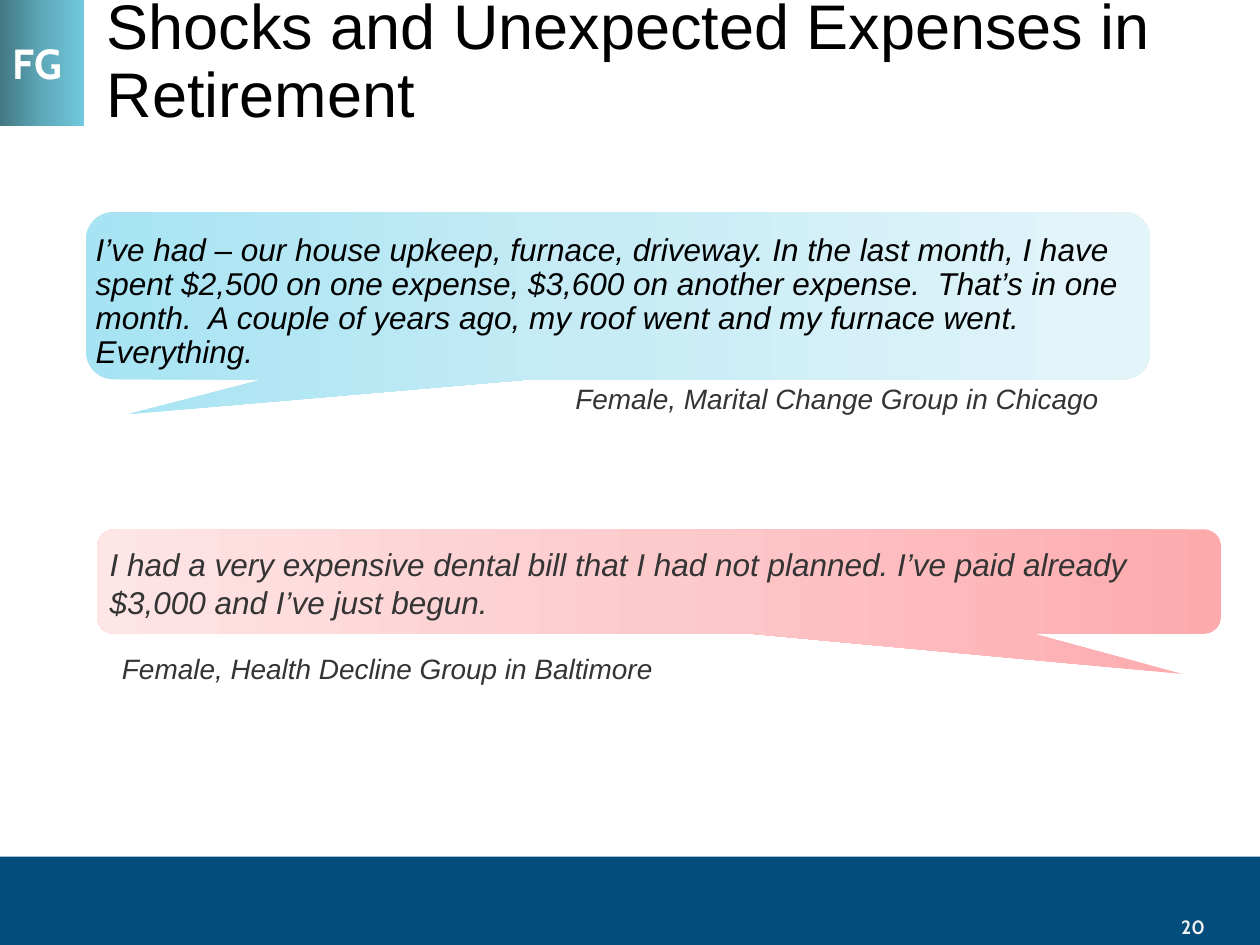
from copy import deepcopy
from dataclasses import dataclass

from pptx import Presentation
from pptx.dml.color import RGBColor
from pptx.enum.shapes import MSO_SHAPE
from pptx.enum.text import MSO_ANCHOR, PP_ALIGN
from pptx.oxml.ns import qn
from pptx.shapes.autoshape import Shape
from pptx.slide import Slide
from pptx.util import Cm, Pt

BLACK = RGBColor(0x00, 0x00, 0x00)
CHARCOAL = RGBColor(0x34, 0x34, 0x34)
WHITE = RGBColor(0xFF, 0xFF, 0xFF)
PALE_GREY = RGBColor(0xF2, 0xF2, 0xF2)
NAVY = RGBColor(0x02, 0x4D, 0x7C)
TEALS = (RGBColor(0x42, 0x77, 0x82), RGBColor(0x5E, 0xA9, 0xB9), RGBColor(0x70, 0xC8, 0xDC))
BLUES = (RGBColor(0xA7, 0xE3, 0xF3), RGBColor(0xC8, 0xEC, 0xF6), RGBColor(0xE4, 0xF5, 0xFA))
PINKS = (RGBColor(0xFD, 0xAA, 0xAD), RGBColor(0xFD, 0xCA, 0xCC), RGBColor(0xFE, 0xE5, 0xE6))


@dataclass(frozen=True)
class Box:
    """Left, top, width and height in centimetres."""
    left: float
    top: float
    width: float
    height: float

    def lengths(self) -> tuple[Cm, Cm, Cm, Cm]:
        return Cm(self.left), Cm(self.top), Cm(self.width), Cm(self.height)


@dataclass(frozen=True)
class TextStyle:
    size: int
    color: RGBColor
    font: str = "Arial"
    bold: bool = False
    italic: bool = False
    line_spacing: float = 1.0
    anchor: MSO_ANCHOR = MSO_ANCHOR.TOP
    align: PP_ALIGN = PP_ALIGN.LEFT
    wrap: bool = True


@dataclass(frozen=True)
class Bubble:
    box: Box
    tail: tuple[float, float]
    colors: tuple[RGBColor, ...]
    angle: int


@dataclass(frozen=True)
class Label:
    box: Box
    text: str
    style: TextStyle


BUBBLES = (
    Bubble(Box(1.96, 10.67, 22.66, 2.11), (0.464, 0.88), PINKS, 180),
    Bubble(Box(1.73, 4.27, 21.46, 3.38), (-0.46, 0.707), BLUES, 0),
)

LABELS = (
    Label(Box(1.9, 0, 22.23, 2.54), "Shocks and Unexpected Expenses in Retirement",
          TextStyle(36, BLACK, line_spacing=0.9, anchor=MSO_ANCHOR.MIDDLE)),
    Label(Box(1.68, 4.6, 21.51, 2.77),
          "I’ve had – our house upkeep, furnace, driveway. In the last month, I have "
          "spent $2,500 on one expense, $3,600 on another expense.  That’s in one month.  "
          "A couple of years ago, my roof went and my furnace went. Everything.",
          TextStyle(18, BLACK, italic=True, line_spacing=0.9)),
    Label(Box(11.35, 7.65, 11.23, 1.04), "Female, Marital Change Group in Chicago",
          TextStyle(16, CHARCOAL, italic=True, line_spacing=0.9)),
    Label(Box(1.96, 10.74, 22.23, 2.03),
          "I had a very expensive dental bill that I had not planned. "
          "I’ve paid already $3,000 and I’ve just begun.",
          TextStyle(18, CHARCOAL, italic=True, anchor=MSO_ANCHOR.MIDDLE)),
    Label(Box(2.21, 13, 11.66, 1.02), "Female, Health Decline Group in Baltimore",
          TextStyle(16, CHARCOAL, italic=True)),
    Label(Box(18.62, 18.21, 5.92, 0.84), "20",
          TextStyle(11, PALE_GREY, "Cabin", bold=True, anchor=MSO_ANCHOR.BOTTOM,
                    align=PP_ALIGN.RIGHT)),
)


def write_text(shape: Shape, text: str, style: TextStyle) -> None:
    frame = shape.text_frame
    frame.text = text
    frame.word_wrap = style.wrap
    frame.vertical_anchor = style.anchor
    paragraph = frame.paragraphs[0]
    paragraph.alignment = style.align
    paragraph.line_spacing = style.line_spacing
    font = paragraph.runs[0].font
    font.name = style.font
    font.size = Pt(style.size)
    font.bold = style.bold
    font.italic = style.italic
    font.color.rgb = style.color


def add_plain_shape(slide: Slide, kind: MSO_SHAPE, box: Box) -> Shape:
    """Add a preset shape with neither outline nor shadow."""
    shape = slide.shapes.add_shape(kind, *box.lengths())
    shape.shadow.inherit = False
    shape.line.fill.background()
    return shape


def fill_gradient(shape: Shape, colors: tuple[RGBColor, ...], angle: int) -> None:
    """Spread three colours evenly along a linear gradient."""
    shape.fill.gradient()
    shape.fill.gradient_angle = angle
    stop_list = shape.fill._xPr.find(qn("a:gradFill")).find(qn("a:gsLst"))
    stop_list.append(deepcopy(stop_list[-1]))
    for index, (stop, color) in enumerate(zip(shape.fill.gradient_stops, colors)):
        stop.position = index / (len(colors) - 1)
        stop.color.rgb = color


def add_bubble(slide: Slide, bubble: Bubble) -> None:
    shape = add_plain_shape(slide, MSO_SHAPE.ROUNDED_RECTANGULAR_CALLOUT, bubble.box)
    shape.adjustments[0], shape.adjustments[1] = bubble.tail
    fill_gradient(shape, bubble.colors, bubble.angle)


def add_label(slide: Slide, label: Label) -> None:
    write_text(slide.shapes.add_textbox(*label.box.lengths()), label.text, label.style)


def main() -> None:
    presentation = Presentation()
    presentation.slide_width = Cm(25.4)
    presentation.slide_height = Cm(19.05)
    slide = presentation.slides.add_slide(presentation.slide_layouts[6])

    footer = add_plain_shape(slide, MSO_SHAPE.RECTANGLE, Box(0, 17.27, 25.4, 1.78))
    footer.fill.solid()
    footer.fill.fore_color.rgb = NAVY

    for bubble in BUBBLES:
        add_bubble(slide, bubble)

    badge = add_plain_shape(slide, MSO_SHAPE.RECTANGLE, Box(0, 0, 1.7, 2.54))
    fill_gradient(badge, TEALS, 0)
    write_text(badge, "FG", TextStyle(24, WHITE, "Cabin", bold=True,
                                      anchor=MSO_ANCHOR.MIDDLE, wrap=False))

    for label in LABELS:
        add_label(slide, label)

    presentation.save("out.pptx")


if __name__ == "__main__":
    main()
